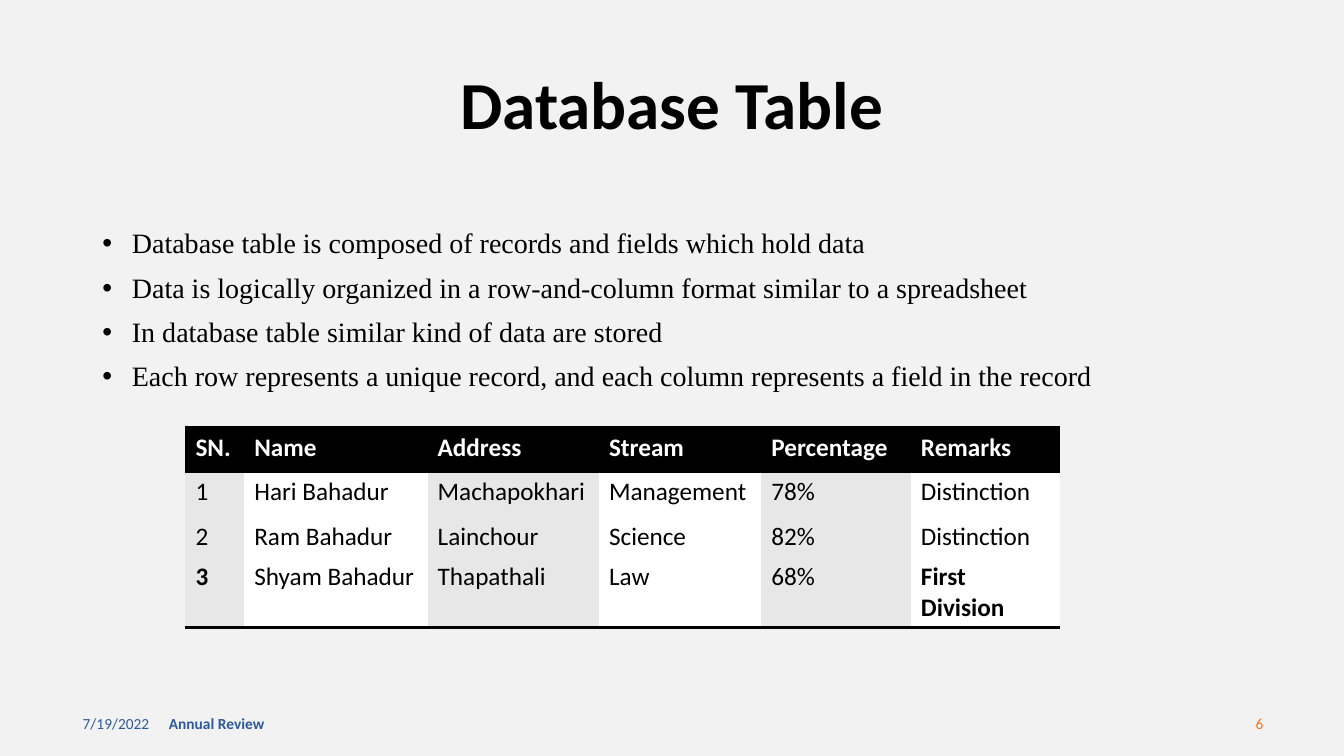
from lxml import etree
from pptx import Presentation
from pptx.dml.color import RGBColor
from pptx.enum.text import MSO_ANCHOR, MSO_AUTO_SIZE, PP_ALIGN
from pptx.oxml import parse_xml
from pptx.oxml.ns import nsdecls, qn
from pptx.util import Pt

LEFT, CENTER, RIGHT = PP_ALIGN.LEFT, PP_ALIGN.CENTER, PP_ALIGN.RIGHT
MIDDLE = MSO_ANCHOR.MIDDLE
NO_AUTOFIT = MSO_AUTO_SIZE.NONE
PLAIN_TABLE_STYLE = "{2D5ABB26-0587-4C30-8999-92F81FD0307C}"
BLACK, WHITE, GREY = "000000", "FFFFFF", "E7E7E7"
BLUE, ORANGE = "2C599D", "FA6F1A"


def rgb(value):
    return RGBColor.from_string(value)


def write(paragraph, text, size=18, font="Calibri", color=BLACK, bold=False, align=LEFT):
    paragraph.alignment = align
    run = paragraph.add_run()
    run.text = text
    run.font.size = Pt(size)
    run.font.name = font
    run.font.bold = bold
    run.font.color.rgb = rgb(color)


presentation = Presentation()
presentation.slide_width, presentation.slide_height = Pt(960), Pt(540)
slide = presentation.slides.add_slide(presentation.slide_layouts[1])
slide.background.fill.solid()
slide.background.fill.fore_color.rgb = rgb("F2F2F2")

# Footer: date, review name and slide number
footer = [
    ("7/19/2022", 52, 216, {"color": BLUE}),
    ("Annual Review", 113.5, 324, {"color": BLUE, "bold": True}),
    ("6", 693.5, 216, {"color": ORANGE, "align": RIGHT}),
]
for text, left, width, look in footer:
    frame = slide.shapes.add_textbox(Pt(left), Pt(502.5), Pt(width), Pt(29)).text_frame
    frame.word_wrap = True
    frame.vertical_anchor = MIDDLE
    write(frame.paragraphs[0], text, size=11, **look)

# Title
title = slide.shapes.title
title.left, title.top, title.width, title.height = Pt(66), Pt(49.5), Pt(828), Pt(55.5)
title.text_frame.auto_size = NO_AUTOFIT
title.text_frame.vertical_anchor = MIDDLE
heading = title.text_frame.paragraphs[0]
heading.line_spacing = 0.9
write(heading, "Database Table", size=48, bold=True, align=CENTER)

# Bullet list
facts = [
    "Database table is composed of records and fields which hold data",
    "Data is logically organized in a row-and-column format similar to a spreadsheet",
    "In database table similar kind of data are stored",
    "Each row represents a unique record, and each column represents a field in the record",
]
body = slide.placeholders[1]
body.left, body.top, body.width, body.height = Pt(66), Pt(160.5), Pt(828), Pt(324)
body.text_frame.auto_size = NO_AUTOFIT
for index, fact in enumerate(facts):
    bullet = body.text_frame.add_paragraph() if index else body.text_frame.paragraphs[0]
    bullet.line_spacing = 0.9
    bullet.space_before = Pt(10)
    write(bullet, fact, size=20, font="Times New Roman")
    properties = bullet._p.get_or_add_pPr()
    properties.set("marL", str(Pt(21)))
    properties.set("indent", str(-Pt(21)))
    etree.SubElement(properties, qn("a:buChar")).set("char", "•")

# Student records
records = [
    ["SN.", "Name", "Address", "Stream", "Percentage", "Remarks"],
    ["1", "Hari Bahadur", "Machapokhari", "Management", "78%", "Distinction"],
    ["2", "Ram Bahadur", "Lainchour", "Science", "82%", "Distinction"],
    ["3", "Shyam Bahadur", "Thapathali", "Law", "68%", "First Division"],
]
column_widths = [42, 131, 122.4, 116, 106.8, 106.8]
row_heights = [32, 32, 24.5, 39]
last_row, last_column = len(row_heights) - 1, len(column_widths) - 1

students = slide.shapes.add_table(
    len(row_heights), len(column_widths),
    Pt(132.5), Pt(305), Pt(sum(column_widths)), Pt(sum(row_heights)),
).table
students.horz_banding = False
students._tbl.tblPr.find(qn("a:tableStyleId")).text = PLAIN_TABLE_STYLE
for column, width in zip(students.columns, column_widths):
    column.width = Pt(width)

for r, (record, height) in enumerate(zip(records, row_heights)):
    students.rows[r].height = Pt(height)
    header, last = r == 0, r == last_row
    edges = ["lnT", "lnB"] if header else ["lnB"] if last else []
    for c, value in enumerate(record):
        cell = students.cell(r, c)
        cell.fill.solid()
        cell.fill.fore_color.rgb = rgb(BLACK if header else WHITE if c % 2 else GREY)
        write(cell.text_frame.paragraphs[0], value,
              color=WHITE if header else BLACK,
              bold=header or (last and c in (0, last_column)))
        for position, edge in enumerate(edges):
            cell._tc.get_or_add_tcPr().insert(position, parse_xml(
                f'<a:{edge} {nsdecls("a")} w="{Pt(2)}"><a:solidFill>'
                f'<a:srgbClr val="{BLACK}"/></a:solidFill></a:{edge}>'))

presentation.save("out.pptx")
